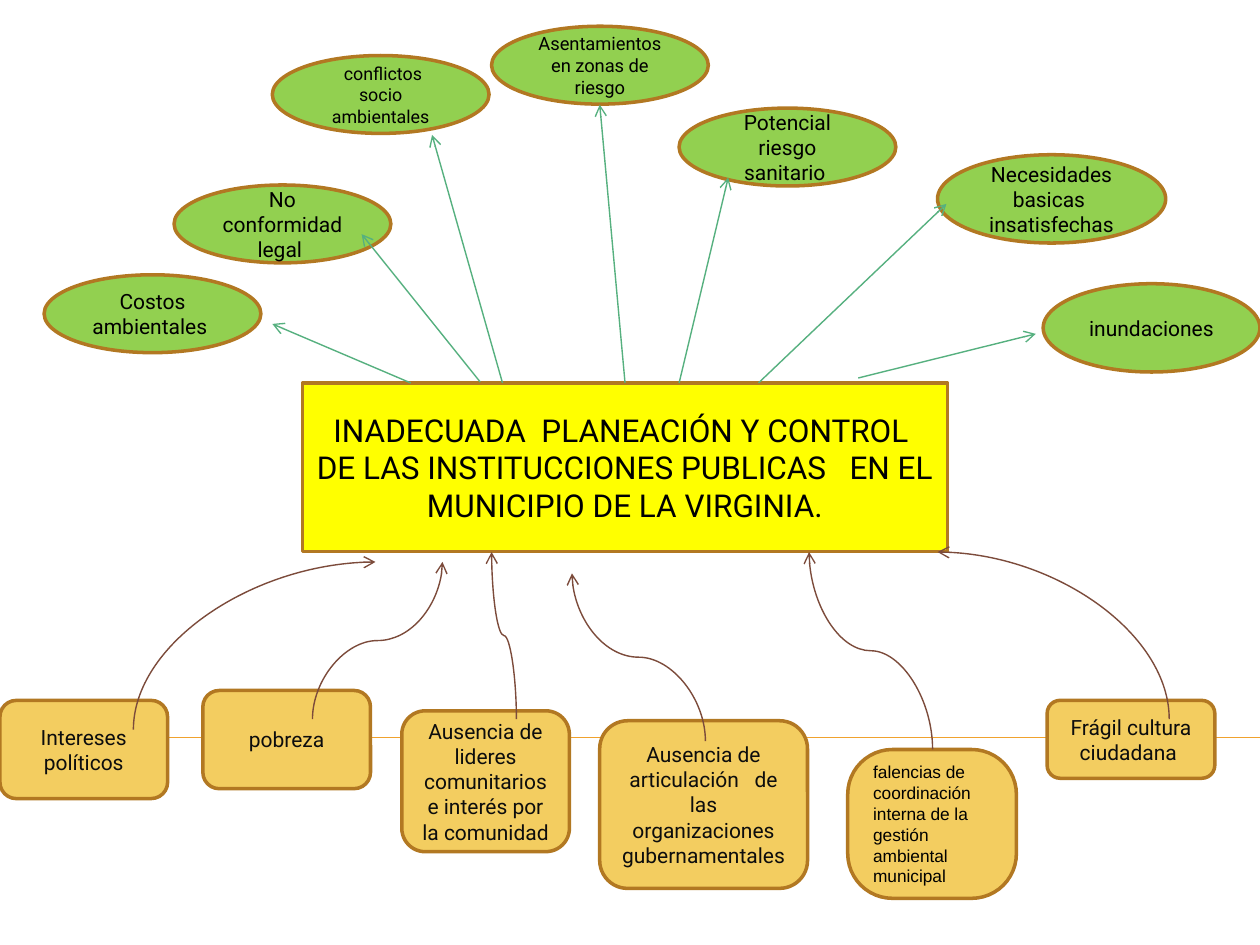
from lxml import etree
from pptx import Presentation
from pptx.dml.color import RGBColor
from pptx.enum import shapes, text
from pptx.oxml.ns import qn
from pptx.util import Cm, Pt

YELLOW = RGBColor(0xFF, 0xFF, 0x00)
GREEN = RGBColor(0x92, 0xD0, 0x50)
SAND = RGBColor(0xF3, 0xCD, 0x60)
BROWN = RGBColor(0xB2, 0x78, 0x22)
ORANGE = RGBColor(0xF0, 0xA2, 0x2E)
TEAL = RGBColor(0x56, 0xB0, 0x7F)
MAROON = RGBColor(0x7C, 0x4B, 0x3B)
BLACK = RGBColor(0x00, 0x00, 0x00)
INK = RGBColor(0x0D, 0x0D, 0x0D)

RECT = shapes.MSO_SHAPE.RECTANGLE
OVAL = shapes.MSO_SHAPE.OVAL
ROUNDED = shapes.MSO_SHAPE.ROUNDED_RECTANGLE
STRAIGHT = shapes.MSO_CONNECTOR.STRAIGHT
CURVE = shapes.MSO_CONNECTOR.CURVE

prs = Presentation()
prs.slide_width, prs.slide_height = Cm(25.4), Cm(19.05)
slide = prs.slides.add_slide(prs.slide_layouts[6])


def add_idea(kind, box, wording, size, fill, ink, font="Roboto", align=text.PP_ALIGN.CENTER):
    idea = slide.shapes.add_shape(kind, *map(Cm, box))
    idea.shadow.inherit = False
    idea.fill.solid()
    idea.fill.fore_color.rgb = fill
    idea.line.color.rgb = BROWN
    idea.line.width = Pt(2)
    frame = idea.text_frame
    frame.word_wrap = True
    frame.vertical_anchor = text.MSO_ANCHOR.MIDDLE
    frame.text = wording
    for paragraph in frame.paragraphs:
        paragraph.alignment = align
        paragraph.font.name = font
        paragraph.font.size = Pt(size)
        paragraph.font.color.rgb = ink
    return idea


def add_link(kind, ends, color, width=0.79, arrow=True):
    link = slide.shapes.add_connector(kind, *map(Cm, ends))
    link.line.color.rgb = color
    link.line.width = Pt(width)
    properties = link._element.spPr
    if arrow:
        etree.SubElement(properties.find(qn("a:ln")), qn("a:tailEnd"), type="arrow")
    etree.SubElement(properties, qn("a:effectLst"))
    return properties


add_link(STRAIGHT, (1.42, 14.86, 25.4, 14.86), ORANGE, 0.75, arrow=False)

add_idea(
    RECT, (6.1, 7.72, 13, 3.4),
    "INADECUADA  PLANEACIÓN Y CONTROL  DE LAS INSTITUCCIONES PUBLICAS   EN EL MUNICIPIO DE LA VIRGINIA.",
    18, YELLOW, BLACK,
)

causes = [
    ((0, 14.12, 3.38, 1.98), "Intereses políticos"),
    ((4.09, 13.92, 3.38, 1.98), "pobreza"),
    ((8.1, 14.33, 3.38, 2.84), "Ausencia de lideres comunitarios e interés por la comunidad"),
    ((12.09, 14.53, 4.19, 3.38), "Ausencia de articulación   de las organizaciones gubernamentales "),
    ((21.11, 14.12, 3.38, 1.57), "Frágil cultura\nciudadana "),
]
for box, wording in causes:
    add_idea(ROUNDED, box, wording, 12, SAND, INK)

coordination = add_idea(
    ROUNDED, (17.09, 15.11, 3.4, 3),
    "falencias de coordinación interna de la gestión ambiental municipal",
    9.9, SAND, BLACK, "Arial", text.PP_ALIGN.LEFT,
)
coordination.adjustments[0] = 0.3

effects = [
    ((5.49, 1.12, 4.37, 1.57), " conflictos socio ambientales", 10.2),
    ((3.51, 3.73, 4.37, 1.57), "No conformidad legal ", 12),
    ((0.89, 5.54, 4.37, 1.57), "Costos ambientales ", 12),
    ((9.91, 0.53, 4.37, 1.57), "Asentamientos en zonas de riesgo", 10.5),
    ((13.69, 2.18, 4.37, 1.57), "Potencial riesgo sanitario ", 12),
    ((18.9, 3.12, 4.6, 1.78), "Necesidades basicas \ninsatisfechas", 12),
    ((21.03, 5.72, 4.37, 1.78), "inundaciones", 12),
]
for box, wording, size in effects:
    add_idea(OVAL, box, wording, size, GREEN, BLACK)

effect_arrows = [
    (8.28, 7.72, 5.49, 6.53),
    (9.68, 7.7, 7.29, 4.72),
    (10.13, 7.72, 8.71, 2.72),
    (12.6, 7.72, 12.09, 2.11),
    (13.69, 7.72, 14.68, 3.58),
    (15.29, 7.72, 19.08, 4.11),
    (17.3, 7.62, 20.88, 6.73),
]
for ends in effect_arrows:
    add_link(STRAIGHT, ends, TEAL)

cause_arrows = [
    (6.3, 14.5, 8.92, 11.33, "curvedConnector3"),
    (10.41, 14.5, 9.91, 11.13, "curvedConnector3"),
    (18.8, 15.11, 16.31, 11.13, "curvedConnector3"),
    (23.57, 14.5, 18.9, 11.13, "curvedConnector2"),
    (2.69, 14.71, 7.57, 11.33, "curvedConnector2"),
    (14.22, 14.94, 11.53, 11.56, "curvedConnector3"),
]
for x1, y1, x2, y2, bend in cause_arrows:
    middle_x, middle_y = (x1 + x2) / 2, (y1 + y2) / 2
    half_rise, half_run = (y1 - y2) / 2, abs(x2 - x1) / 2
    side, turn = (1, 90) if x2 > x1 else (-1, 270)
    ends = (middle_x + side * half_rise, middle_y + half_run,
            middle_x - side * half_rise, middle_y - half_run)
    properties = add_link(CURVE, ends, MAROON)
    properties.find(qn("a:xfrm")).set("rot", str(turn * 60000))
    properties.find(qn("a:prstGeom")).set("prst", bend)

prs.save("out.pptx")
